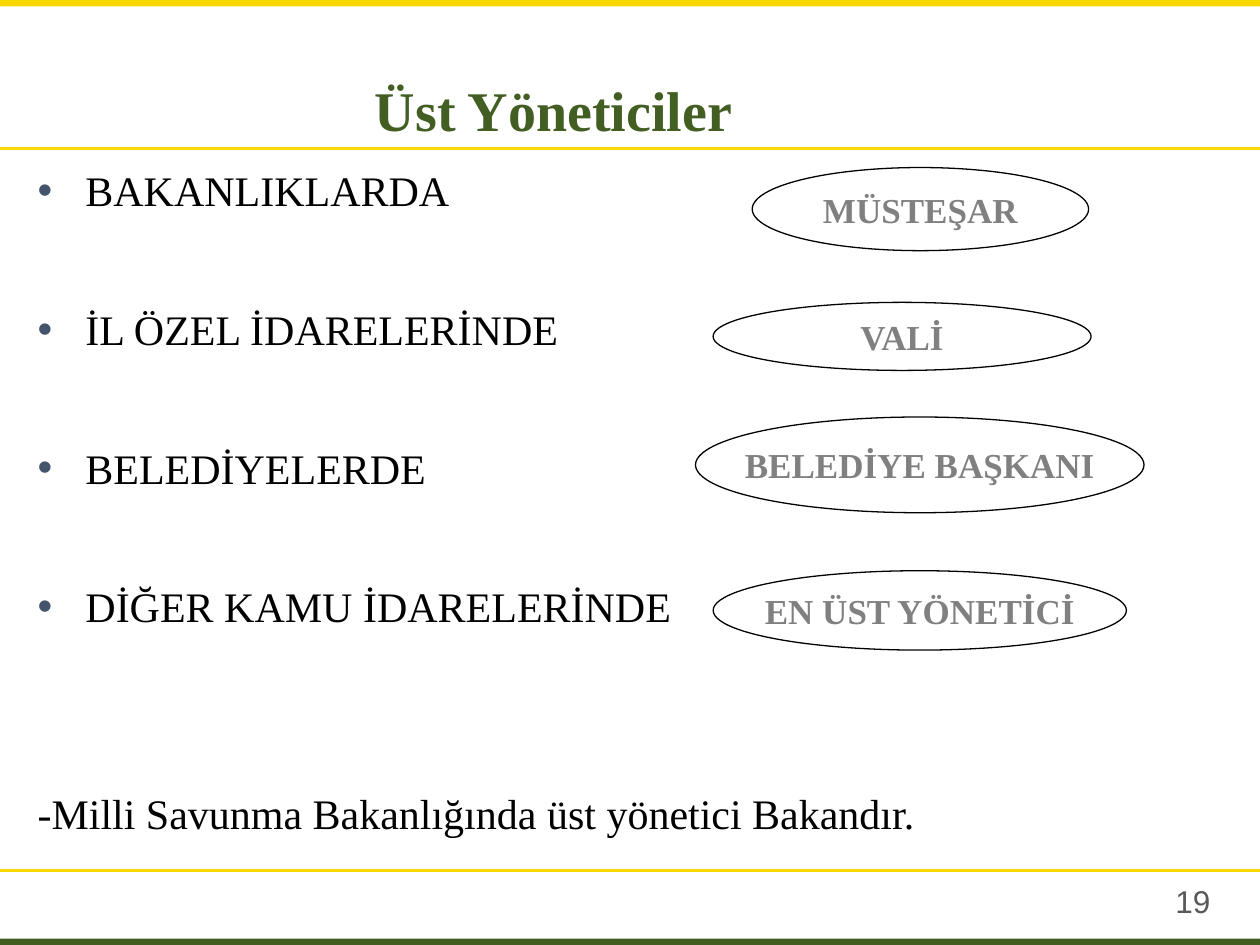
from pptx import Presentation
from pptx import util as u
from pptx.dml.color import RGBColor
from pptx.enum import shapes, text
from pptx.oxml import parse_xml
from pptx.oxml.ns import nsdecls, qn

SERIF = "Times New Roman"
YELLOW, GREEN = "F9D702", "435E23"
BLACK, GREY, DARK_GREY, SLATE = "000000", "808080", "595959", "44546A"


def colour(value):
    """Turn a hex string into a colour."""
    return RGBColor.from_string(value)


def add_span(para, words, size, ink, bold=False, face=SERIF):
    """Add one formatted run to a paragraph."""
    span = para.add_run()
    span.text = words
    span.font.name = face
    span.font.size = u.Pt(size)
    span.font.bold = bold
    span.font.color.rgb = colour(ink)


def add_bullet(para):
    """Give a paragraph a hanging slate bullet."""
    props = para._p.get_or_add_pPr()
    props.set("marL", str(u.Inches(0.38)))
    props.set("indent", str(u.Inches(-0.38)))
    ns = nsdecls("a")
    props.append(parse_xml(f'<a:buClr {ns}><a:srgbClr val="{SLATE}"/></a:buClr>'))
    props.append(parse_xml(f'<a:buFont {ns} typeface="Arial"/>'))
    props.append(parse_xml(f'<a:buChar {ns} char="•"/>'))


def add_frame(page, width, height):
    """Draw the edge bars and the two rules across the page."""
    bar_height = 0.05
    for top, fill in ((0, YELLOW), (height - bar_height, GREEN)):
        bar = page.shapes.add_shape(
            shapes.MSO_SHAPE.RECTANGLE, 0, u.Inches(top),
            u.Inches(width), u.Inches(bar_height))
        bar.shadow.inherit = False
        bar.fill.solid()
        bar.fill.fore_color.rgb = colour(fill)
        bar.line.fill.background()
    for top in (1.18, 6.91):
        rule = page.shapes.add_connector(
            shapes.MSO_CONNECTOR.STRAIGHT, 0, u.Inches(top),
            u.Inches(width), u.Inches(top))
        rule.line.color.rgb = colour(YELLOW)
        rule.line.width = u.Pt(1.5)
        rule._element.find(qn("p:spPr")).append(
            parse_xml(f'<a:effectLst {nsdecls("a")}/>'))


def set_title(page, left, top, width, height, words):
    """Place and format the title placeholder."""
    title = page.shapes.title
    title.left, title.top = u.Inches(left), u.Inches(top)
    title.width, title.height = u.Inches(width), u.Inches(height)
    frame = title.text_frame
    frame.auto_size = text.MSO_AUTO_SIZE.NONE
    frame.vertical_anchor = text.MSO_ANCHOR.BOTTOM
    para = frame.paragraphs[0]
    para.alignment = text.PP_ALIGN.CENTER
    add_span(para, words, 32, GREEN, bold=True)


def add_institutions(page, left, top, width, height, names, note):
    """List the institutions as bullets, followed by a plain note."""
    box = page.shapes.add_textbox(
        u.Inches(left), u.Inches(top), u.Inches(width), u.Inches(height))
    frame = box.text_frame
    frame.word_wrap = True
    for index, name in enumerate(names):
        para = frame.add_paragraph() if index else frame.paragraphs[0]
        para.line_spacing = 1.05
        para.space_before = u.Pt(49 if index else 0)
        add_bullet(para)
        add_span(para, name, 24, BLACK)
    para = frame.add_paragraph()
    para.line_spacing = 1.05
    para.space_before = u.Pt(88)
    add_span(para, note, 24, BLACK)


def add_manager(page, left, top, width, height, name):
    """Draw an outlined ellipse naming a top manager."""
    ellipse = page.shapes.add_shape(
        shapes.MSO_SHAPE.OVAL, u.Inches(left), u.Inches(top),
        u.Inches(width), u.Inches(height))
    ellipse.shadow.inherit = False
    ellipse.fill.background()
    ellipse.line.color.rgb = colour(BLACK)
    ellipse.line.width = u.Pt(0.75)
    frame = ellipse.text_frame
    frame.word_wrap = False
    frame.vertical_anchor = text.MSO_ANCHOR.MIDDLE
    para = frame.paragraphs[0]
    para.alignment = text.PP_ALIGN.CENTER
    add_span(para, name, 20, GREY, bold=True)


def add_page_number(page, left, top, width, height, number):
    """Write the page number."""
    box = page.shapes.add_textbox(
        u.Inches(left), u.Inches(top), u.Inches(width), u.Inches(height))
    box.text_frame.word_wrap = True
    add_span(box.text_frame.paragraphs[0], number, 18, DARK_GREY, face="Arial")


def main():
    """Build the slide and save the deck."""
    deck = Presentation()
    deck.slide_width, deck.slide_height = u.Inches(10), u.Inches(7.5)
    page = deck.slides.add_slide(deck.slide_layouts.get_by_name("Title Only"))
    add_frame(page, 10, 7.5)
    add_page_number(page, 9.23, 6.95, 0.77, 0.4, "19")
    add_institutions(
        page, 0.2, 1.24, 9.63, 5.66,
        ("BAKANLIKLARDA", "İL ÖZEL İDARELERİNDE", "BELEDİYELERDE",
         "DİĞER KAMU İDARELERİNDE"),
        "-Milli Savunma Bakanlığında üst yönetici Bakandır.")
    set_title(page, 0.2, 0.54, 8.39, 0.64, "Üst Yöneticiler")
    managers = (
        (5.97, 1.33, 2.67, 0.66, "MÜSTEŞAR"),
        (5.66, 2.4, 3, 0.54, "VALİ"),
        (5.52, 3.31, 3.56, 0.76, "BELEDİYE BAŞKANI"),
        (5.66, 4.53, 3.28, 0.63, "EN ÜST YÖNETİCİ"),
    )
    for manager in managers:
        add_manager(page, *manager)
    deck.save("out.pptx")


if __name__ == "__main__":
    main()
